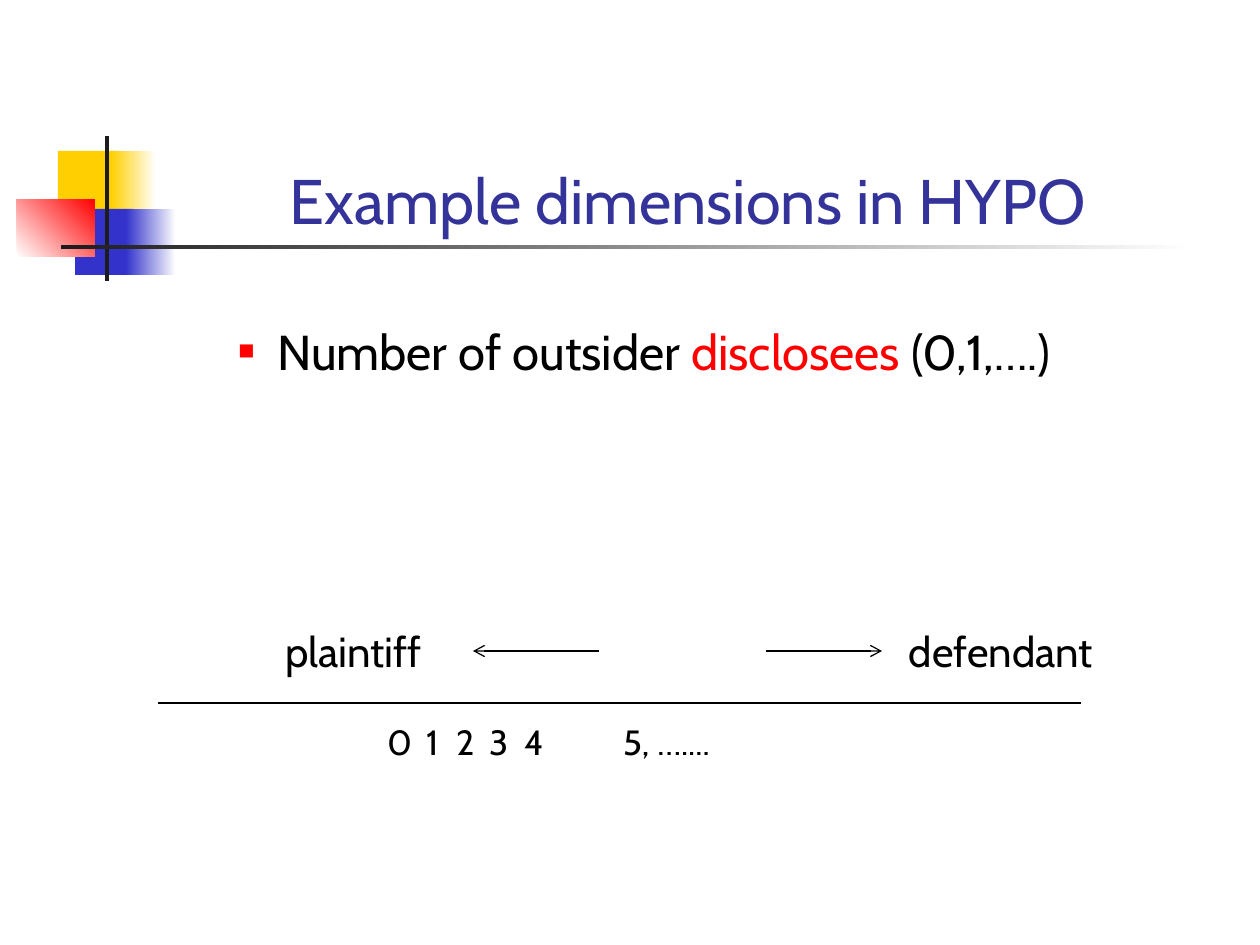
from lxml import etree
from pptx import Presentation
from pptx.dml.color import RGBColor
from pptx.enum.shapes import MSO_CONNECTOR, MSO_SHAPE
from pptx.enum.text import MSO_ANCHOR, PP_ALIGN
from pptx.oxml.ns import qn
from pptx.util import Emu, Pt

RECTANGLE = MSO_SHAPE.RECTANGLE
STRAIGHT = MSO_CONNECTOR.STRAIGHT
TOP, BOTTOM = MSO_ANCHOR.TOP, MSO_ANCHOR.BOTTOM
LEFT, CENTER = PP_ALIGN.LEFT, PP_ALIGN.CENTER
EMU_PER_PX = 914400 / 126
FONT = "Cabin"
BLACK, WHITE, DARK = "000000", "FFFFFF", "1C1C1C"
YELLOW, BLUE, RED, TITLE_BLUE = "FFCF01", "3333CC", "FF0000", "333399"


def px(length):
    """Turn pixels into EMU."""
    return Emu(round(length * EMU_PER_PX))


def color(value):
    """Turn a hex string into a colour."""
    return RGBColor.from_string(value)


def add_xml(parent, tag, **attributes):
    """Append a DrawingML element and return it."""
    values = {name: str(value) for name, value in attributes.items()}
    return etree.SubElement(parent, qn(tag), values)


def set_values(target, values):
    """Set attributes from a dict."""
    for name, value in values.items():
        setattr(target, name, value)


def add_block(slide, box, colors, angle=0):
    """Add a borderless rectangle with a plain or two-colour gradient fill."""
    shape = slide.shapes.add_shape(RECTANGLE, *map(px, box))
    shape.shadow.inherit = False
    shape.line.fill.background()
    if len(colors) == 1:
        shape.fill.solid()
        shape.fill.fore_color.rgb = color(colors[0])
        return
    shape.fill.gradient()
    shape.fill.gradient_angle = angle
    for stop, value in zip(shape.fill.gradient_stops, colors):
        stop.color.rgb = color(value)


def add_text(slide, box, runs, size, align=CENTER, **frame_format):
    """Add a one-paragraph text box and return its paragraph."""
    frame = slide.shapes.add_textbox(*map(px, box)).text_frame
    set_values(frame, {"word_wrap": True, "vertical_anchor": TOP, **frame_format})
    paragraph = frame.paragraphs[0]
    paragraph.alignment = align
    for text, value in runs:
        run = paragraph.add_run()
        run.text = text
        set_values(run.font, {"name": FONT, "size": Pt(size)})
        run.font.color.rgb = color(value)
    return paragraph


def add_line(slide, start, end, arrow=False):
    """Add a thin black line, with an open arrowhead at its end if asked."""
    line = slide.shapes.add_connector(STRAIGHT, *map(px, (*start, *end)))
    line.line.width = Pt(0.75)
    line.line.color.rgb = color(BLACK)
    if arrow:
        add_xml(line.line._get_or_add_ln(), "a:tailEnd", type="arrow")
    add_xml(line._element.spPr, "a:effectLst")


def add_ornament(slide, left, top):
    """Draw the coloured squares and the crossing bars."""
    blocks = [
        ((41, 15, 61, 66), [YELLOW], 0),
        ((94, 15, 45, 66), [YELLOW, WHITE], 0),
        ((58, 73, 58, 66), [BLUE], 0),
        ((109, 73, 50, 66), [BLUE, WHITE], 0),
        ((0, 63, 78, 58), [WHITE, RED], 45),
        ((88, 0, 4, 145), [DARK], 0),
        ((44, 109, 1134, 4), [DARK, WHITE], 0),
    ]
    for (x, y, width, height), colors, angle in blocks:
        add_block(slide, (left + x, top + y, width, height), colors, angle)


def add_bullet(slide, box):
    """Write the bulleted statement."""
    runs = [("Number of outsider ", BLACK), ("disclosees ", RED), ("(0,1,….)", BLACK)]
    properties = add_text(slide, box, runs, 28, LEFT)._p.get_or_add_pPr()
    properties.set("marL", str(px(102)))
    properties.set("indent", str(px(-39)))
    add_xml(add_xml(properties, "a:spcBef"), "a:spcPct", val=20000)
    add_xml(add_xml(properties, "a:buClr"), "a:srgbClr", val=RED)
    add_xml(properties, "a:buSzPct", val=55000)
    add_xml(properties, "a:buFont", typeface="Arial")
    add_xml(properties, "a:buChar", char="■")


def add_scale(slide, left, top):
    """Draw the axis between plaintiff and defendant with its values."""
    arrow_y, axis_y = top + 32, top + 84
    add_line(slide, (left, axis_y), (left + 923, axis_y))
    for start, end in ((441, 315), (608, 724)):
        add_line(slide, (left + start, arrow_y), (left + end, arrow_y), True)
    for text, x, width in (("plaintiff", 113, 165), ("defendant", 736, 214)):
        add_text(slide, (left + x, top, width, 64), [(text, BLACK)], 24, word_wrap=False)
    ticks = "\t".join(["0", "1", "2", "3", "4", "5, …...."])
    paragraph = add_text(slide, (left - 27, top + 95, 677, 55), [(ticks, BLACK)], 20,
                         LEFT, margin_left=px(256))
    tabs = add_xml(paragraph._p.get_or_add_pPr(), "a:tabLst")
    for position in (39, 69, 102, 137, 236):
        add_xml(tabs, "a:tab", pos=px(position), algn="l")


def main():
    """Build and save the slide."""
    presentation = Presentation()
    set_values(presentation, {"slide_width": px(1260), "slide_height": px(945)})
    slide = presentation.slides.add_slide(presentation.slide_layouts[6])
    add_ornament(slide, 17, 136)
    add_text(slide, (116, 86, 1144, 157), [("Example dimensions in HYPO", TITLE_BLUE)],
             36, vertical_anchor=BOTTOM)
    add_bullet(slide, (163, 315, 1071, 567))
    add_scale(slide, 158, 619)
    presentation.save("out.pptx")


if __name__ == "__main__":
    main()
